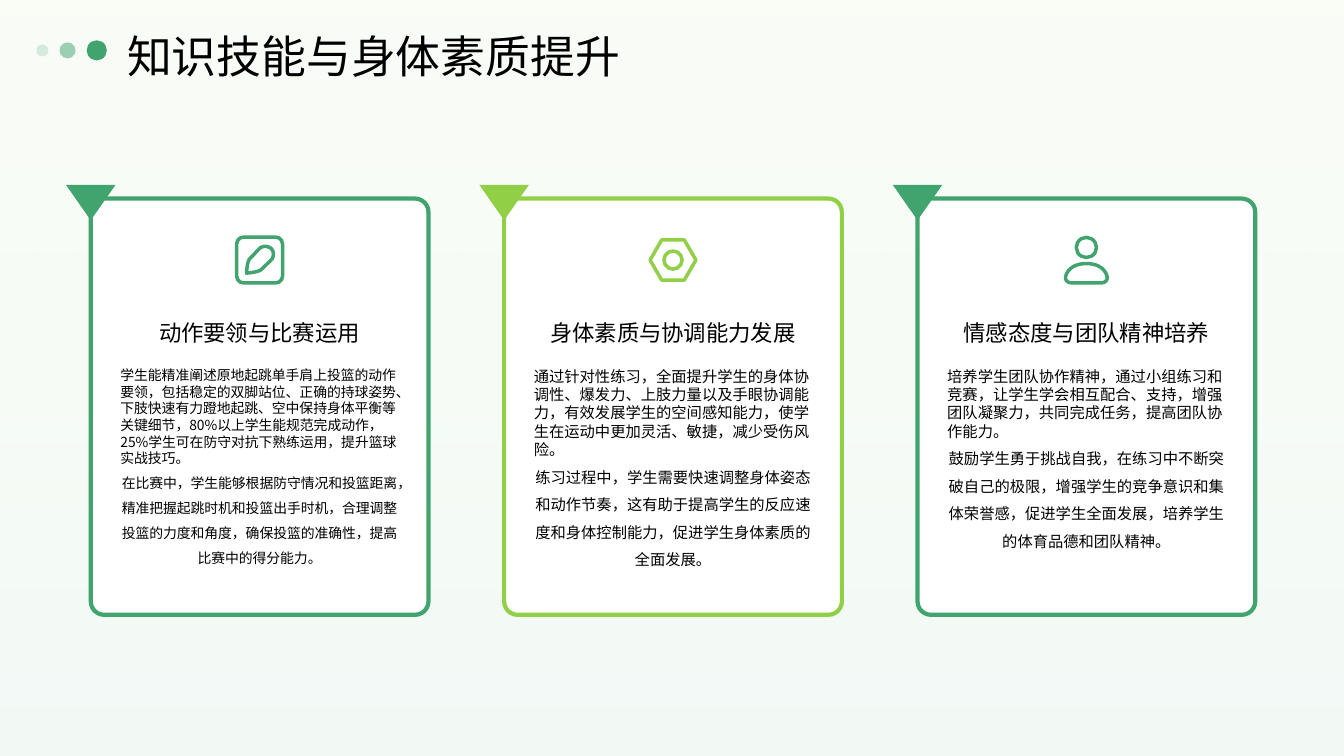
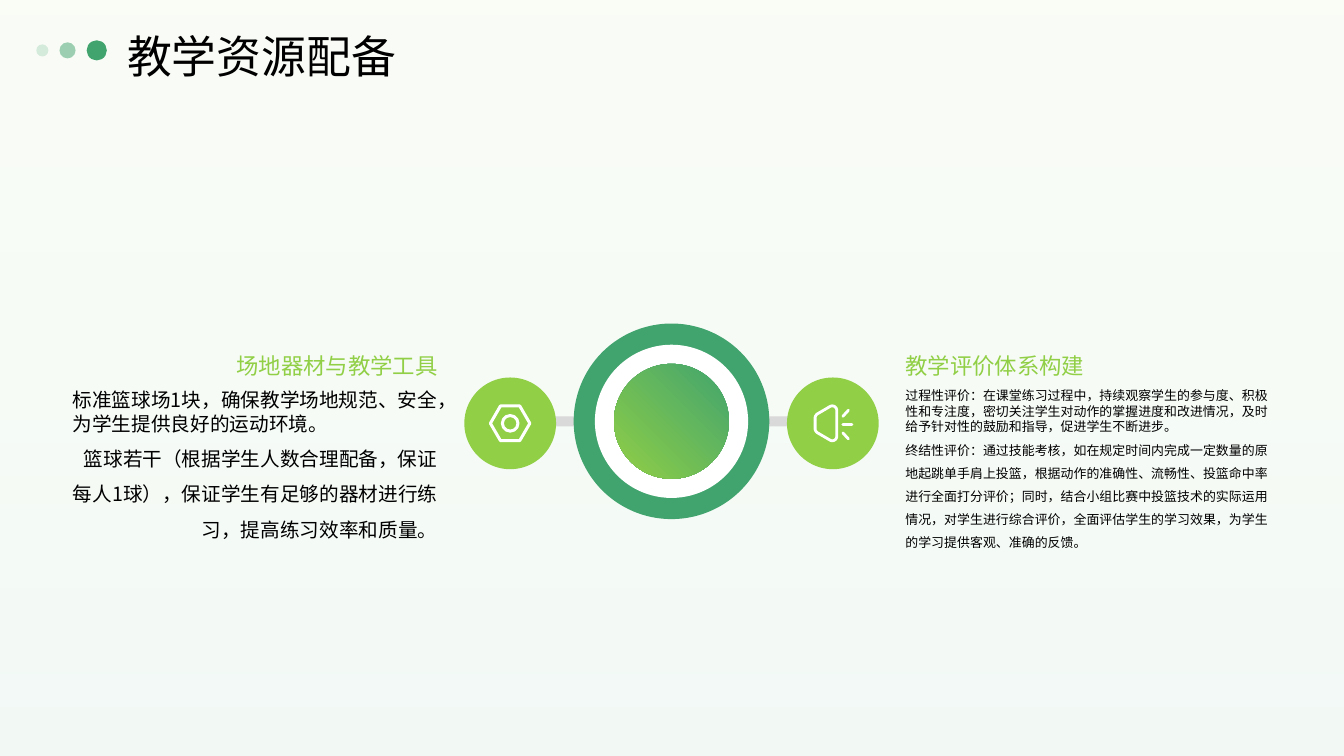
from pptx import Presentation
from pptx.dml.color import RGBColor
from pptx.enum.shapes import MSO_CONNECTOR, MSO_SHAPE
from pptx.enum.text import MSO_ANCHOR, PP_ALIGN
from pptx.oxml.ns import qn
from pptx.util import Inches, Pt
from lxml import etree

RECT, ROUNDED = MSO_SHAPE.RECTANGLE, MSO_SHAPE.ROUNDED_RECTANGLE
OVAL, HEXAGON, MARKER = MSO_SHAPE.OVAL, MSO_SHAPE.HEXAGON, MSO_SHAPE.FLOWCHART_MERGE
LEFT, CENTER, RIGHT = PP_ALIGN.LEFT, PP_ALIGN.CENTER, PP_ALIGN.RIGHT
TOP, MIDDLE, BOTTOM = MSO_ANCHOR.TOP, MSO_ANCHOR.MIDDLE, MSO_ANCHOR.BOTTOM

GREEN = RGBColor(0x41, 0xA4, 0x6E)
LIME = RGBColor(0x91, 0xCF, 0x46)
MINT = RGBColor(0xD7, 0xEF, 0xE2)
CREAM = RGBColor(0xE9, 0xF5, 0xDA)
GRAY = RGBColor(0xD9, 0xD9, 0xD9)
WHITE = RGBColor(0xFF, 0xFF, 0xFF)
BLACK = RGBColor(0, 0, 0)
FONT = "Noto Sans CJK SC"
WIDTH, HEIGHT = 13.33, 7.5

# Content
SKILLS_TITLE = "知识技能与身体素质提升"
CARDS = [
    ("动作要领与比赛运用", GREEN, "pencil", 9.9, [
        "学生能精准阐述原地起跳单手肩上投篮的动作要领，包括稳定的双脚站位、正确的持球姿势、下肢快速有力蹬地起跳、空中保持身体平衡等关键细节，80%以上学生能规范完成动作，25%学生可在防守对抗下熟练运用，提升篮球实战技巧。",
        "在比赛中，学生能够根据防守情况和投篮距离，精准把握起跳时机和投篮出手时机，合理调整投篮的力度和角度，确保投篮的准确性，提高比赛中的得分能力。"]),
    ("身体素质与协调能力发展", LIME, "nut", 10.9, [
        "通过针对性练习，全面提升学生的身体协调性、爆发力、上肢力量以及手眼协调能力，有效发展学生的空间感知能力，使学生在运动中更加灵活、敏捷，减少受伤风险。",
        "练习过程中，学生需要快速调整身体姿态和动作节奏，这有助于提高学生的反应速度和身体控制能力，促进学生身体素质的全面发展。"]),
    ("情感态度与团队精神培养", GREEN, "person", 10.9, [
        "培养学生团队协作精神，通过小组练习和竞赛，让学生学会相互配合、支持，增强团队凝聚力，共同完成任务，提高团队协作能力。",
        "鼓励学生勇于挑战自我，在练习中不断突破自己的极限，增强学生的竞争意识和集体荣誉感，促进学生全面发展，培养学生的体育品德和团队精神。"]),
]
RESOURCES_TITLE = "教学资源配备"
# heading, side of the hub, text left, alignment, icon, icon scale, size, body
RESOURCES = [
    ("场地器材与教学工具", -1, 0.72, RIGHT, "nut", 0.86, 14, [
        "标准篮球场1块，确保教学场地规范、安全，为学生提供良好的运动环境。",
        "篮球若干（根据学生人数合理配备，保证每人1球），保证学生有足够的器材进行练习，提高练习效率和质量。"]),
    ("教学评价体系构建", 1, 8.98, LEFT, "megaphone", 1, 9.2, [
        "过程性评价：在课堂练习过程中，持续观察学生的参与度、积极性和专注度，密切关注学生对动作的掌握进度和改进情况，及时给予针对性的鼓励和指导，促进学生不断进步。",
        "终结性评价：通过技能考核，如在规定时间内完成一定数量的原地起跳单手肩上投篮，根据动作的准确性、流畅性、投篮命中率进行全面打分评价；同时，结合小组比赛中投篮技术的实际运用情况，对学生进行综合评价，全面评估学生的学习效果，为学生的学习提供客观、准确的反馈。"]),
]

# Icons in hundredths of an inch around their centre.
# presets: kind, centre x, centre y, width, height, adjustment
# outline: points, or six numbers for a Bézier curve; rays: straight lines
ICONS = {
    "pencil": {
        "stroke": 2.5,
        "presets": [(ROUNDED, 0, 0, 45.5, 45.5, 0.15)],
        "outline": [(5.5, -13.5), (7.5, -13.5, 9.5, -13, 11.5, -11.5),
                    (14.5, -8, 14.5, -3.5, 11.5, 0), (1.5, 9.5),
                    (-0.5, 11.5, -7.5, 12.5, -13, 13),
                    (-12.5, 5.5, -11.5, 0, -9.5, -1.5), (0, -11.5),
                    (1.5, -13, 3.5, -13.5, 5.5, -13.5)]},
    "nut": {
        "stroke": 2.5,
        "presets": [(HEXAGON, 0, 0, 45.5, 40, 0.29), (OVAL, 0, 0, 18, 18, None)]},
    "person": {
        "stroke": 2.5,
        "presets": [(OVAL, 0, -12.5, 20, 20, None)],
        "outline": [(0, 3.5), (12, 3.5, 18.5, 9, 20.5, 16),
                    (21.5, 19, 19, 22.5, 15.5, 22.5), (-15.5, 22.5),
                    (-19, 22.5, -21.5, 19, -20.5, 16),
                    (-18.5, 9, -12, 3.5, 0, 3.5)]},
    "megaphone": {
        "stroke": 2,
        "outline": [(4, -12.5), (4, 12.5), (4, 16.5, 0, 18.5, -3, 16.5), (-15, 9.5),
                    (-16.5, 8.5, -17.5, 7, -17.5, 5.5), (-17.5, -5.5),
                    (-17.5, -7, -16.5, -8.5, -15, -9.5), (-3, -16.5),
                    (0, -18.5, 4, -16.5, 4, -12.5)],
        "rays": [(10, -7, 15.5, -13), (10, 1, 19, 1), (10, 9.5, 15.5, 15.5)]},
}


def set_alpha(shape, percents):
    colors = shape.element.spPr.iter(qn("a:srgbClr"))
    for color, percent in zip(colors, percents):
        etree.SubElement(color, qn("a:alpha")).set("val", str(percent * 1000))


def add_box(page, kind, left, top, width, height, fill=None, line=None, weight=0):
    box = page.shapes.add_shape(
        kind, Inches(left), Inches(top), Inches(width), Inches(height))
    paint(box, fill, line, weight)
    return box


def add_centered(page, kind, x, y, width, height, *style):
    return add_box(page, kind, x - width / 2, y - height / 2, width, height, *style)


def paint(shape, fill, line, weight):
    shape.shadow.inherit = False
    if fill is None:
        shape.fill.background()
    else:
        shape.fill.solid()
        shape.fill.fore_color.rgb = fill
    if line is None:
        shape.line.fill.background()
    else:
        shape.line.color.rgb = line
        shape.line.width = Pt(weight)


def fill_gradient(shape, colors, angle):
    shape.fill.gradient()
    shape.fill.gradient_angle = angle
    for stop, color in zip(shape.fill.gradient_stops, colors):
        stop.color.rgb = color


def add_text(page, area, paragraphs, size, color=BLACK, anchor=TOP):
    """Each paragraph is a tuple of text, alignment and line spacing."""
    frame = page.shapes.add_textbox(*map(Inches, area)).text_frame
    frame.word_wrap = True
    frame.vertical_anchor = anchor
    frame.margin_left = frame.margin_right = frame.margin_top = frame.margin_bottom = 0
    for index, (text, alignment, spacing) in enumerate(paragraphs):
        para = frame.add_paragraph() if index else frame.paragraphs[0]
        para.text = text
        para.alignment = alignment
        para.line_spacing = spacing
        para.font.size = Pt(size)
        para.font.color.rgb = color
        para.font.name = FONT
        properties = para.font._element
        etree.SubElement(properties, qn("a:ea")).set("typeface", FONT)


def add_body(page, area, texts, alignment, size):
    first, second = texts
    add_text(page, area, [(first, LEFT, 1.0), (second, alignment, 1.5)], size)


def trace(segments, steps=10):
    points = [segments[0]]
    for segment in segments[1:]:
        if len(segment) == 2:
            points.append(segment)
            continue
        curve = [points[-1], segment[:2], segment[2:4], segment[4:]]
        for step in range(1, steps + 1):
            t = step / steps
            weights = ((1 - t) ** 3, 3 * t * (1 - t) ** 2, 3 * t * t * (1 - t), t ** 3)
            points.append(tuple(
                sum(w * point[axis] for w, point in zip(weights, curve))
                for axis in (0, 1)))
    return points


def add_icon(page, name, x, y, color, scale=1):
    icon = ICONS[name]
    unit, weight = scale / 100, icon["stroke"] * scale

    def place(point):
        return Inches(x + point[0] * unit), Inches(y + point[1] * unit)

    for kind, dx, dy, width, height, adjustment in icon.get("presets", []):
        part = add_centered(page, kind, x + dx * unit, y + dy * unit,
                            width * unit, height * unit, None, color, weight)
        if adjustment is not None:
            part.adjustments[0] = adjustment
    if "outline" in icon:
        start, *others = map(place, trace(icon["outline"]))
        builder = page.shapes.build_freeform(*start)
        builder.add_line_segments(others, close=True)
        paint(builder.convert_to_shape(), None, color, weight)
    for ray in icon.get("rays", []):
        line = page.shapes.add_connector(
            MSO_CONNECTOR.STRAIGHT, *place(ray[:2]), *place(ray[2:]))
        line.line.color.rgb = color
        line.line.width = Pt(weight)
        line.line._get_or_add_ln().set("cap", "rnd")
        etree.SubElement(line.element.spPr, qn("a:effectLst"))


def add_page(deck, title):
    page = deck.slides.add_slide(deck.slide_layouts[6])
    backdrop = add_box(page, RECT, 0, 0, WIDTH, HEIGHT)
    fill_gradient(backdrop, (MINT, CREAM), 90)
    set_alpha(backdrop, (31, 22))
    add_text(page, (1.26, 0.26, 11.89, 0.47), [(title, LEFT, 1.2)], 32, anchor=MIDDLE)
    for x, size, opacity in ((0.96, 0.2, 100), (0.67, 0.16, 50), (0.42, 0.12, 20)):
        dot = add_centered(page, OVAL, x, 0.5, size, size, GREEN)
        if opacity < 100:
            set_alpha(dot, [opacity])
    return page


def build_skills(deck):
    page = add_page(deck, SKILLS_TITLE)
    card_width, card_top, text_width = 3.35, 1.97, 2.76
    for index, (heading, color, icon, size, texts) in enumerate(CARDS):
        left = 0.9 + 4.1 * index
        middle = left + card_width / 2
        text_left = middle - text_width / 2
        card = add_box(page, ROUNDED, left, card_top, card_width, 4.13, WHITE, color, 3)
        card.adjustments[0] = 0.04
        add_centered(page, MARKER, left, 2.01, 0.49, 0.35, color)
        add_icon(page, icon, middle, 2.58, color)
        add_text(page, (text_left, 2.96, text_width, 0.63),
                 [(heading, CENTER, 1.2)], 16, anchor=MIDDLE)
        add_body(page, (text_left, 3.64, text_width, 2.17), texts, CENTER, size)


def build_resources(deck):
    page = add_page(deck, RESOURCES_TITLE)
    hub_x, hub_y = 6.66, 4.18
    # Bars behind the hub
    for side in (-1, 1):
        add_centered(page, RECT, hub_x + side * 1.1, hub_y, 0.5, 0.1, GRAY)
    # Concentric hub
    for diameter, color in ((1.94, GREEN), (1.52, WHITE), (1.14, GREEN)):
        disc = add_centered(page, OVAL, hub_x, hub_y, diameter, diameter, color)
    fill_gradient(disc, (GREEN, LIME), 225)
    # Side circles with their text
    for heading, side, left, alignment, icon, scale, size, texts in RESOURCES:
        x, y = hub_x + side * 1.6, 4.2
        add_centered(page, OVAL, x, y, 0.91, 0.91, LIME)
        add_icon(page, icon, x, y, WHITE, scale)
        add_text(page, (left, 3.31, 3.62, 0.45),
                 [(heading, alignment, 1.5)], 16, LIME, BOTTOM)
        add_body(page, (left, 3.85, 3.62, 1.74), texts, alignment, size)


def main():
    deck = Presentation()
    deck.slide_width, deck.slide_height = Inches(WIDTH), Inches(HEIGHT)
    build_skills(deck)
    build_resources(deck)
    deck.save("out.pptx")


if __name__ == "__main__":
    main()
